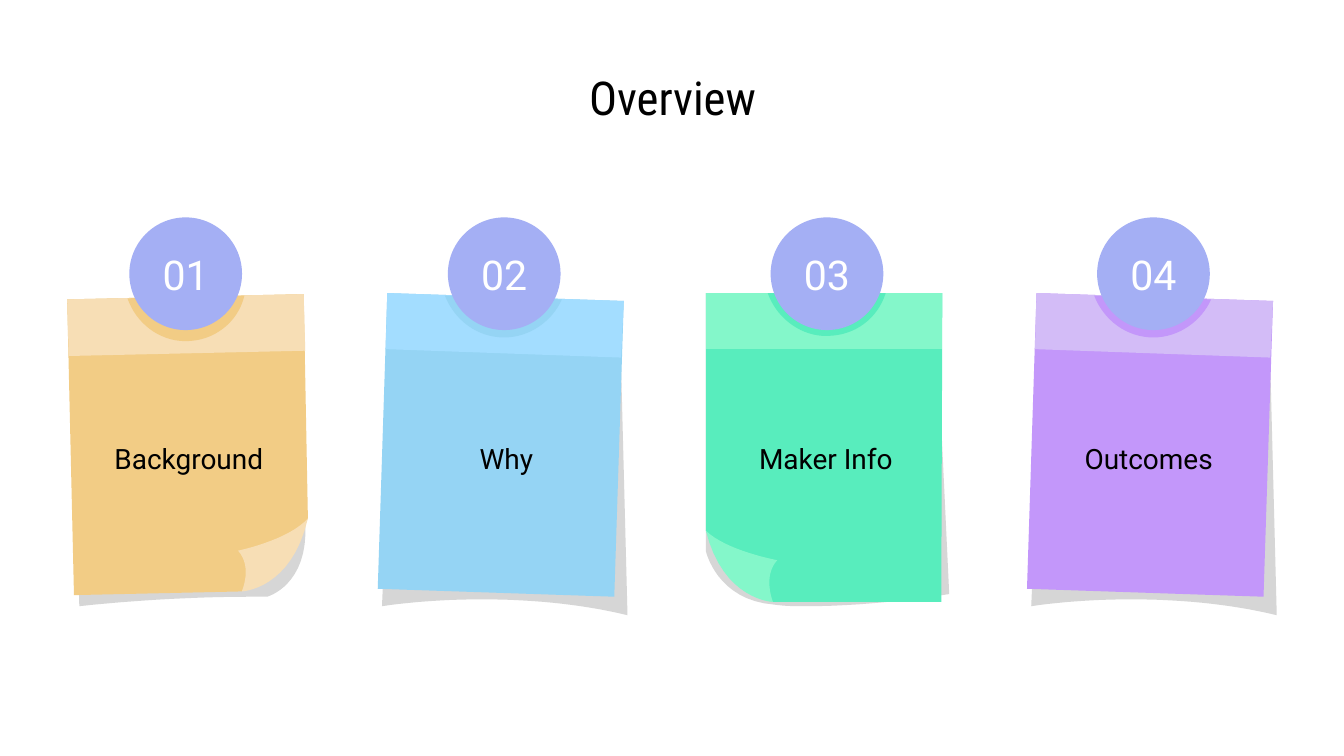
from pptx import Presentation
from pptx.dml.color import RGBColor
from pptx.enum.shapes import MSO_SHAPE as Shape
from pptx.enum.text import MSO_ANCHOR as Anchor, PP_ALIGN as Align
from pptx.util import Cm, Pt

THEME = {
    "title_font": "Roboto Condensed", "font": "Roboto",
    "title_size": 25, "number_size": 22, "label_size": 15,
    "text": "000000", "number": "FFFFFF", "badge": "A4AFF4", "shadow": "D6D6D6",
    # note colours: (paper, light)
    "orange": ("F2CC85", "F7DEB5"), "blue": ("95D4F4", "A3DDFF"),
    "green": ("58EDBD", "84F7CA"), "purple": ("C397FA", "D3BCF7"),
}

TITLE = "Overview"
# label, colour, style, note left, label left
NOTES = [
    ("Background", "orange", "curled right", 1.27, 1.32),
    ("Why", "blue", "tilted", 7.14, 7.32),
    ("Maker Info", "green", "curled left", 13.34, 13.36),
    ("Outcomes", "purple", "tilted", 19.41, 19.46),
]

# Outlines in cm: x from the note's left edge, y from the slide's top.
# Two numbers are a straight step to a point; six are a Bezier curve.
STYLES = {
    "tilted": {
        "badge_centre": 2.39,
        "shadow": [(0.33, 5.74), (0.08, 11.46),
                   (0.08, 11.46, 0.86, 11.33, 1.96, 11.33),
                   (2.79, 11.33, 3.78, 11.4, 4.72, 11.63), (4.57, 5.82)],
        "paper": [(0.18, 5.54), (0, 11.13), (4.47, 11.28), (4.65, 5.69)],
        "band": [(0.18, 5.54), (0.15, 6.6), (4.6, 6.76), (4.65, 5.69)],
        "ring": [(1.27, 5.59), (1.45, 6.05, 1.88, 6.38, 2.39, 6.38),
                 (2.87, 6.38, 3.3, 6.07, 3.48, 5.66)],
    },
    "curled left": {
        "badge_centre": 2.29,
        "shadow": [(0, 5.54), (0, 10.41), (0, 10.41, 0.2, 11.35, 1.3, 11.43),
                   (1.5, 11.46, 1.7, 11.46, 1.91, 11.46),
                   (3.23, 11.46, 4.6, 11.23, 4.6, 11.23), (4.34, 5.72)],
        "paper": [(0, 5.54), (0, 10.03), (0.28, 10.57), (1.27, 11.38),
                  (4.45, 11.38), (4.47, 5.54)],
        "band": [(0, 5.54), (0, 6.6), (4.47, 6.6), (4.47, 5.54)],
        "ring": [(1.17, 5.54), (1.32, 5.97, 1.73, 6.32, 2.21, 6.35),
                 (2.29, 6.35), (2.82, 6.35, 3.25, 6.02, 3.4, 5.54)],
        "fold": [(0, 10.03), (0.33, 11.35, 1.27, 11.38, 1.27, 11.38),
                 (1.27, 11.38, 1.07, 10.9, 1.35, 10.59),
                 (1.35, 10.59, 0.38, 10.41, 0, 10.03)],
    },
    "curled right": {
        "badge_centre": 2.24,
        "shadow": [(4.34, 5.74), (0.08, 5.82), (0.23, 11.46),
                   (0.23, 11.46, 1.75, 11.28, 3.51, 11.28), (3.78, 11.28),
                   (3.78, 11.28, 4.57, 11.07, 4.5, 9.88),
                   (4.39, 8.71, 4.34, 5.74, 4.34, 5.74)],
        "paper": [(4.47, 5.56), (0, 5.66), (0.13, 11.25), (3.3, 11.18),
                  (4.27, 10.36), (4.55, 9.8)],
        "band": [(4.47, 5.56), (0, 5.66), (0.03, 6.73), (4.5, 6.63)],
        "ring": [(3.35, 5.59), (1.14, 5.64),
                 (1.3, 6.1, 1.73, 6.45, 2.24, 6.45),
                 (2.77, 6.45, 3.23, 6.1, 3.35, 5.59)],
        "fold": [(4.55, 9.8), (4.19, 10.21, 3.23, 10.41, 3.23, 10.41),
                 (3.51, 10.72, 3.3, 11.18, 3.3, 11.18),
                 (3.3, 11.18, 4.24, 11.15, 4.55, 9.8)],
    },
}
BADGE_TOP, BADGE_SIZE = 4.11, 2.13
LABEL_TOP, LABEL_WIDTH, LABEL_HEIGHT = 7.42, 4.5, 2.49
CURVE_STEPS = 16


def flatten(outline):
    """Turn an outline's steps into points, sampling its Bezier curves."""
    points = [outline[0]]
    for step in outline[1:]:
        if len(step) == 2:
            points.append(step)
            continue
        controls = [points[-1], step[0:2], step[2:4], step[4:6]]
        for index in range(1, CURVE_STEPS + 1):
            t = index / CURVE_STEPS
            weights = ((1 - t) ** 3, 3 * t * (1 - t) ** 2, 3 * t ** 2 * (1 - t), t ** 3)
            points.append(tuple(sum(weight * control[axis]
                                    for weight, control in zip(weights, controls))
                                for axis in (0, 1)))
    return points


def paint(shape, colour):
    shape.shadow.inherit = False
    shape.fill.solid()
    shape.fill.fore_color.rgb = RGBColor.from_string(colour)
    shape.line.fill.background()


def write(shape, text, font, size, colour):
    frame = shape.text_frame
    frame.text = text
    frame.word_wrap = True
    frame.vertical_anchor = Anchor.MIDDLE
    frame.margin_left = frame.margin_right = Cm(0.25)
    frame.margin_top = frame.margin_bottom = Cm(0.25)
    paragraph = frame.paragraphs[0]
    paragraph.alignment = Align.CENTER
    run_font = paragraph.runs[0].font
    run_font.name, run_font.size = font, Pt(size)
    run_font.color.rgb = RGBColor.from_string(colour)


def add_note(slide, number, colour, style, left):
    paper, light = THEME[colour]
    parts = STYLES[style]
    colours = {"shadow": THEME["shadow"], "paper": paper, "band": light,
               "ring": paper, "fold": light}
    group = slide.shapes.add_group_shape()
    for part, fill in colours.items():
        if part in parts:
            points = [(Cm(left + x), Cm(y)) for x, y in flatten(parts[part])]
            builder = group.shapes.build_freeform(*points[0])
            builder.add_line_segments(points[1:], close=True)
            paint(builder.convert_to_shape(), fill)
    badge_left = left + parts["badge_centre"] - BADGE_SIZE / 2
    badge = group.shapes.add_shape(Shape.OVAL, Cm(badge_left), Cm(BADGE_TOP),
                                   Cm(BADGE_SIZE), Cm(BADGE_SIZE))
    paint(badge, THEME["badge"])
    write(badge, f"{number:02}", THEME["font"], THEME["number_size"], THEME["number"])


def main():
    presentation = Presentation()
    presentation.slide_width, presentation.slide_height = Cm(25.4), Cm(14.29)
    slide = presentation.slides.add_slide(presentation.slide_layouts[5])

    title = slide.shapes.title
    title.left, title.top, title.width, title.height = Cm(1.98), Cm(1.27), Cm(21.46), Cm(1.12)
    write(title, TITLE, THEME["title_font"], THEME["title_size"], THEME["text"])

    for number, (label, colour, style, left, label_left) in enumerate(NOTES, start=1):
        add_note(slide, number, colour, style, left)
        box = slide.shapes.add_textbox(Cm(label_left), Cm(LABEL_TOP),
                                       Cm(LABEL_WIDTH), Cm(LABEL_HEIGHT))
        write(box, label, THEME["font"], THEME["label_size"], THEME["text"])

    presentation.save("out.pptx")


if __name__ == "__main__":
    main()
